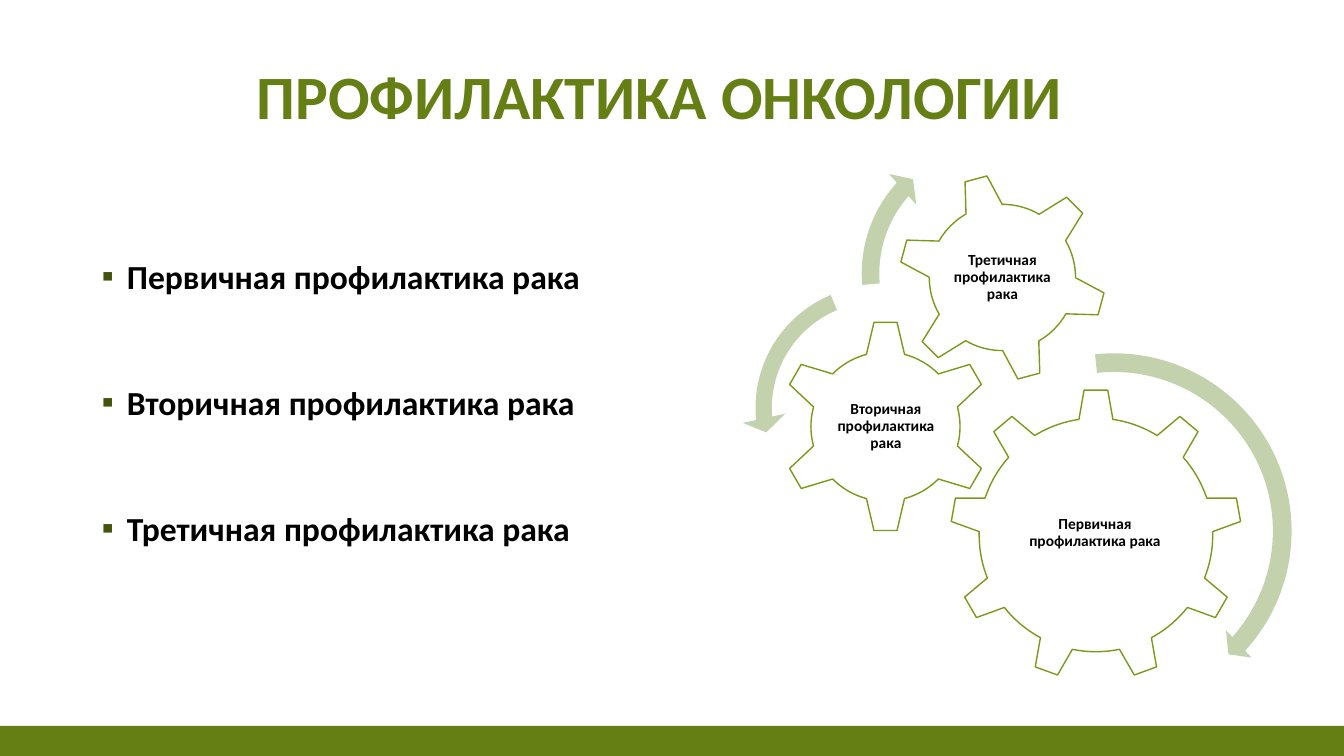
"""Build the slide on cancer prevention with three interlocking gears."""
from dataclasses import dataclass

import lxml.etree
import pptx
import pptx.dml.color
import pptx.enum.shapes
import pptx.enum.text
import pptx.oxml.ns
import pptx.util

SHAPE = pptx.enum.shapes.MSO_SHAPE
ALIGN = pptx.enum.text.PP_ALIGN
ANCHOR = pptx.enum.text.MSO_ANCHOR
SLIDE_WIDTH, SLIDE_HEIGHT = 1344, 756
EMU_PER_PX = 12192000 / SLIDE_WIDTH
FONT = "Calibri"
COLORS = {
    "green": "657F14",
    "bullet": "43540D",
    "gear_line": "7B9919",
    "arrow": "C3D1AC",
    "white": "FFFFFF",
    "black": "000000",
}
Box = tuple[int, int, int, int]


@dataclass(frozen=True)
class Gear:
    """A toothed wheel with its label."""

    preset: int
    left: int
    top: int
    size: int
    rotation: int
    label: str
    label_box: Box


@dataclass(frozen=True)
class TurnArrow:
    """A curved arrow that shows which way a gear turns."""

    preset: int
    left: int
    top: int
    size: int
    adjustments: tuple[float, ...]


PREVENTION_LEVELS = [
    "Первичная профилактика рака",
    "Вторичная профилактика рака",
    "Третичная профилактика рака",
]
PRIMARY, SECONDARY, TERTIARY = PREVENTION_LEVELS
GEARS = [
    Gear(SHAPE.GEAR_9, 950, 389, 292, 0, PRIMARY, (1008, 458, 174, 150)),
    Gear(SHAPE.GEAR_6, 779, 320, 213, 0, SECONDARY, (833, 374, 106, 105)),
    Gear(SHAPE.GEAR_6, 898, 173, 209, 345, TERTIARY, (944, 219, 117, 117)),
]
TURN_ARROWS = [
    TurnArrow(SHAPE.CIRCULAR_ARROW, 927, 344, 374, (0.05, 2.99, 25.29, 158.33, 0.05)),
    TurnArrow(SHAPE.LEFT_CIRCULAR_ARROW, 742, 272, 272, (0.06, 4.3, 104.89, 148.38, 0.08)),
    TurnArrow(SHAPE.CIRCULAR_ARROW, 850, 127, 293, (0.06, 3.94, 133.14, 105.08, 0.07)),
]


def px(length: int) -> pptx.util.Emu:
    """Turn px into EMU."""
    return pptx.util.Emu(round(length * EMU_PER_PX))


def rgb(name: str) -> pptx.dml.color.RGBColor:
    """Look up a colour by name."""
    return pptx.dml.color.RGBColor.from_string(COLORS[name])


def add_bullet(paragraph) -> None:
    """Give a paragraph a hanging square bullet."""
    properties = paragraph._p.get_or_add_pPr()
    properties.set("marL", str(px(30)))
    properties.set("indent", str(-px(25)))
    qn = pptx.oxml.ns.qn
    color = lxml.etree.SubElement(properties, qn("a:buClr"))
    lxml.etree.SubElement(color, qn("a:srgbClr"), val=COLORS["bullet"])
    lxml.etree.SubElement(properties, qn("a:buFont"), typeface=FONT)
    lxml.etree.SubElement(properties, qn("a:buChar"), char="▪")


def write_text(frame, lines: list[str], *, size: int, color: str = "black",
               align=ALIGN.CENTER, anchor=ANCHOR.MIDDLE, spacing: float = 0.9,
               before: int = 0, inset: int | None = None, bullets: bool = False) -> None:
    """Write bold paragraphs into a text frame."""
    frame.word_wrap = True
    frame.auto_size = pptx.enum.text.MSO_AUTO_SIZE.NONE
    frame.vertical_anchor = anchor
    if inset is not None:
        frame.margin_left = frame.margin_right = px(inset)
        frame.margin_top = frame.margin_bottom = px(inset)
    for index, line in enumerate(lines):
        paragraph = frame.add_paragraph() if index else frame.paragraphs[0]
        paragraph.alignment = align
        paragraph.line_spacing = spacing
        paragraph.space_before = pptx.util.Pt(before)
        if bullets:
            add_bullet(paragraph)
        run = paragraph.add_run()
        run.text = line
        run.font.name = FONT
        run.font.size = pptx.util.Pt(size)
        run.font.bold = True
        run.font.color.rgb = rgb(color)


def add_filled(shapes, preset: int, box: Box, fill: str, line: str | None = None):
    """Add a flat preset shape, outlined if a line colour is given."""
    shape = shapes.add_shape(preset, *map(px, box))
    shape.shadow.inherit = False
    shape.fill.solid()
    shape.fill.fore_color.rgb = rgb(fill)
    if line:
        shape.line.color.rgb = rgb(line)
        shape.line.width = pptx.util.Pt(1)
    else:
        shape.line.fill.background()
    return shape


def add_gear(shapes, gear: Gear) -> None:
    """Draw a gear and its upright label."""
    wheel = add_filled(shapes, gear.preset, (gear.left, gear.top, gear.size, gear.size),
                       "white", "gear_line")
    wheel.rotation = gear.rotation
    label = shapes.add_textbox(*map(px, gear.label_box))
    write_text(label.text_frame, [gear.label], size=11, inset=2)


def add_turn_arrow(shapes, arrow: TurnArrow) -> None:
    """Draw a curved arrow."""
    curve = add_filled(shapes, arrow.preset,
                       (arrow.left, arrow.top, arrow.size, arrow.size), "arrow")
    for index, value in enumerate(arrow.adjustments):
        curve.adjustments[index] = value


def main() -> None:
    """Build and save the slide."""
    presentation = pptx.Presentation()
    presentation.slide_width = px(SLIDE_WIDTH)
    presentation.slide_height = px(SLIDE_HEIGHT)
    slide = presentation.slides.add_slide(presentation.slide_layouts[5])

    add_filled(slide.shapes, SHAPE.RECTANGLE, (0, 726, SLIDE_WIDTH, 30), "green")

    title = slide.shapes.title
    title.left, title.top, title.width, title.height = map(px, (156, 35, 1008, 103))
    write_text(title.text_frame, ["ПРОФИЛАКТИКА ОНКОЛОГИИ"], size=44, color="green",
               anchor=ANCHOR.BOTTOM)

    levels = slide.shapes.add_textbox(*map(px, (87, 190, 577, 492)))
    write_text(levels.text_frame, PREVENTION_LEVELS, size=24, align=ALIGN.LEFT,
               anchor=ANCHOR.TOP, spacing=2.5, before=18, bullets=True)

    mechanism = slide.shapes.add_group_shape()
    for gear in GEARS:
        add_gear(mechanism.shapes, gear)
    for arrow in TURN_ARROWS:
        add_turn_arrow(mechanism.shapes, arrow)

    presentation.save("out.pptx")


if __name__ == "__main__":
    main()
